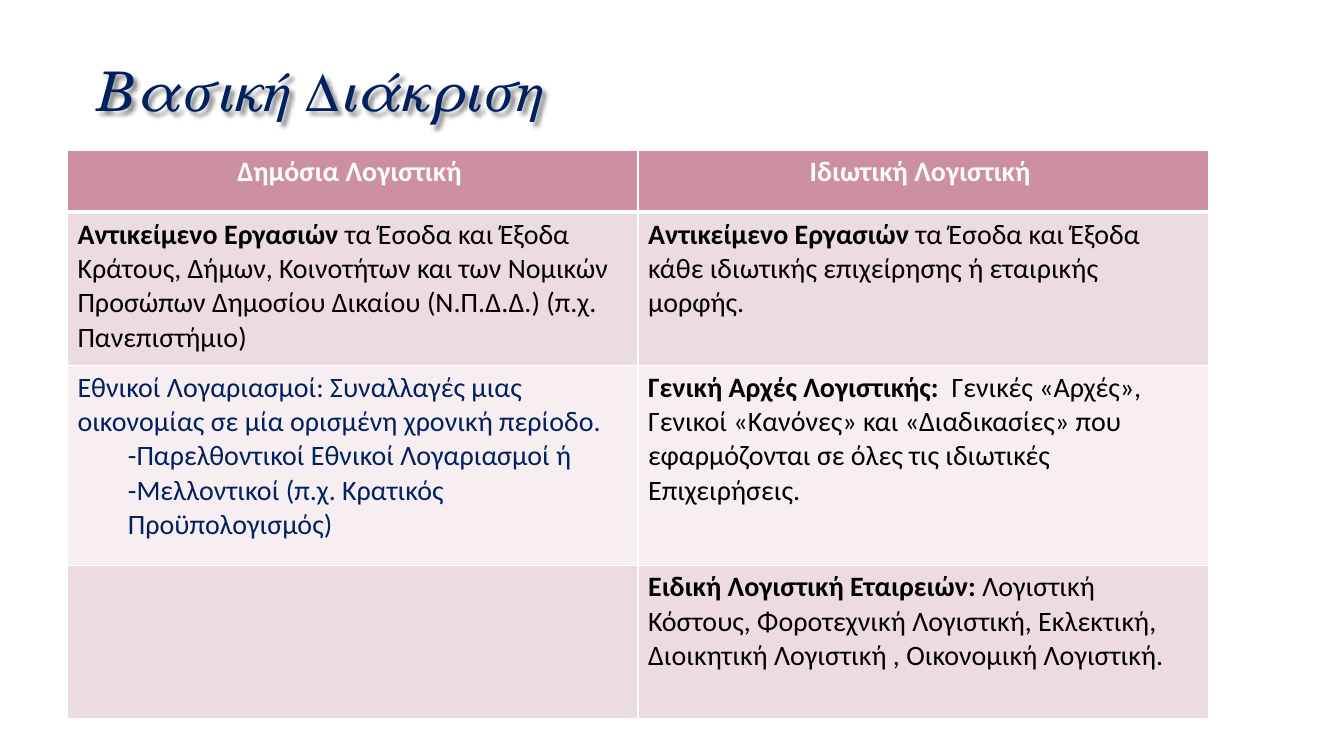
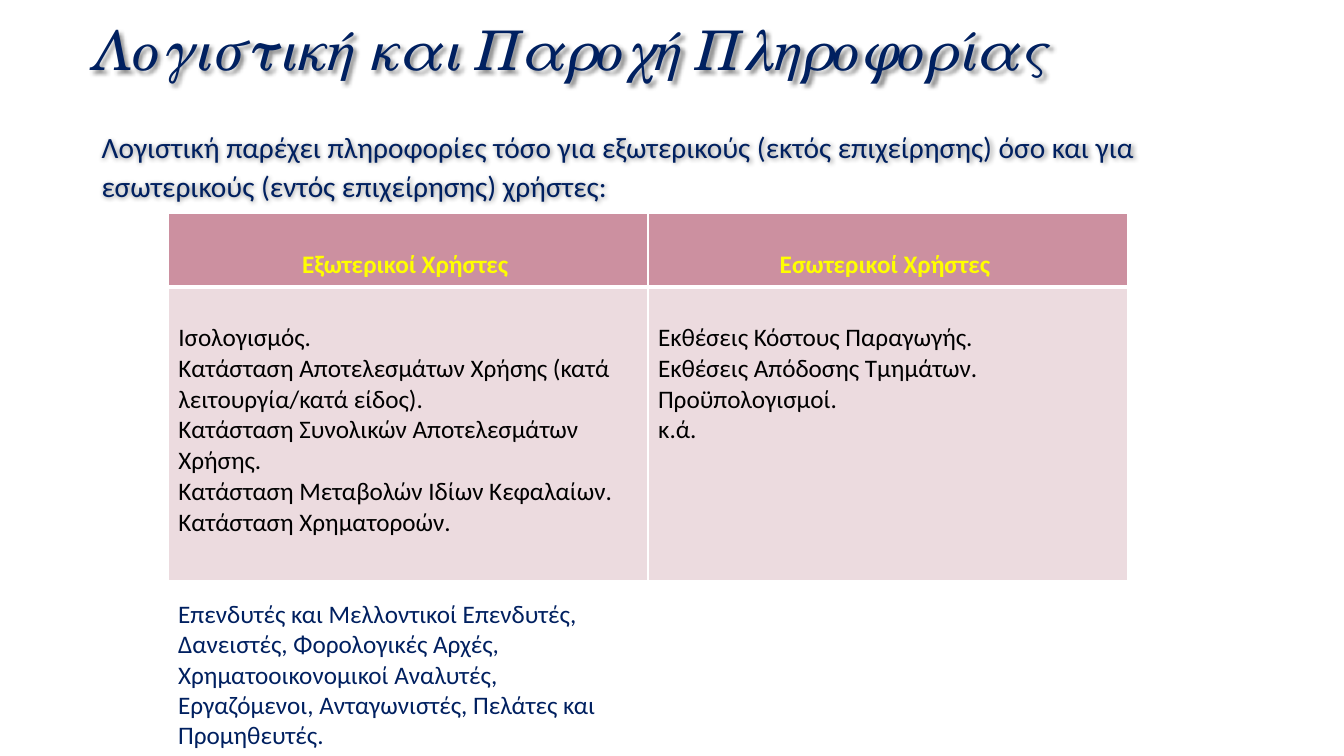
from lxml.etree import SubElement
from pptx import Presentation
from pptx.dml.color import RGBColor
from pptx.enum.text import MSO_ANCHOR, MSO_AUTO_SIZE, PP_ALIGN
from pptx.oxml import parse_xml
from pptx.oxml.ns import nsdecls, qn
from pptx.util import Cm, Pt

COLORS = {
    "navy": "002060", "black": "000000", "white": "FFFFFF", "yellow": "FFFF00",
    "outline": "404040", "header": "CC90A0", "band_dark": "ECDBDF",
    "band_light": "F6EEF0",
}
TITLE_FONT, TEXT_FONT = "TeX Gyre Schola", "Carlito"
CONTENT_LAYOUT, TITLE_LAYOUT = 1, 5
MARGIN_TOP = 0.13


def rgb(name):
    return RGBColor.from_string(COLORS[name])


class Deck:
    def __init__(self):
        self.prs = Presentation()
        self.prs.slide_width, self.prs.slide_height = Cm(33.87), Cm(19.05)
        self.s = None

    def slide(self, layout):
        self.s = self.prs.slides.add_slide(self.prs.slide_layouts[layout])

    def run(self, p, text, size, color, bold=False, italic=False, font=TEXT_FONT):
        r = p.add_run()
        r.text = text
        r.font.name, r.font.size = font, Pt(size)
        r.font.bold, r.font.italic = bold, italic
        r.font.color.rgb = rgb(color)
        return r

    def outline(self, r):
        """Give a run a thin, nearly transparent outline."""
        r.font._element.insert(0, parse_xml(
            f'<a:ln {nsdecls("a")} w="9525"><a:solidFill>'
            f'<a:srgbClr val="{COLORS["outline"]}"><a:alpha val="10000"/></a:srgbClr>'
            '</a:solidFill></a:ln>'))

    def placeholder(self, sp, box, distance):
        """Move a placeholder, shade its text and return its first paragraph."""
        sp.left, sp.top, sp.width, sp.height = map(Cm, box)
        sp._element.spPr.append(parse_xml(
            f'<a:effectLst {nsdecls("a")}><a:outerShdw blurRad="38100" '
            f'dist="{Pt(distance)}" dir="2700000" algn="tl" rotWithShape="0">'
            '<a:srgbClr val="000000"><a:alpha val="45000"/></a:srgbClr>'
            '</a:outerShdw></a:effectLst>'))
        sp.text_frame.auto_size = MSO_AUTO_SIZE.NONE
        return sp.text_frame.paragraphs[0]

    def title(self, text, left, top, align=PP_ALIGN.LEFT):
        sp = self.s.shapes.title
        p = self.placeholder(sp, (left, top, 28.75, 3.5), 3)
        sp.text_frame.vertical_anchor = MSO_ANCHOR.MIDDLE
        p.alignment, p.line_spacing = align, 0.9
        self.outline(self.run(p, text, 39, "navy", italic=True, font=TITLE_FONT))

    def body(self, text, box):
        p = self.placeholder(self.s.placeholders[1], box, 1)
        p.line_spacing, p.space_before, p.space_after = 1.1, Pt(4.2), Pt(6)
        pPr = p._p.get_or_add_pPr()
        pPr.set("marL", str(Cm(0.1)))
        pPr.set("indent", "0")
        SubElement(pPr, qn("a:buNone"))
        self.outline(self.run(p, text, 21, "navy"))

    def textbox(self, text, box, size, margin_top):
        tf = self.s.shapes.add_textbox(*map(Cm, box)).text_frame
        tf.word_wrap, tf.margin_top = True, Cm(margin_top)
        self.run(tf.paragraphs[0], text, size, "navy")

    def borders(self, cell, is_header):
        tcPr = cell._tc.get_or_add_tcPr()
        sides = "LRTB" if is_header else "LRB"
        for side in sides:
            width = 3 if is_header and side == "B" else 1
            tcPr.append(parse_xml(
                f'<a:ln{side} {nsdecls("a")} w="{Pt(width)}"><a:solidFill>'
                f'<a:srgbClr val="{COLORS["white"]}"/></a:solidFill></a:ln{side}>'))

    def cell(self, cell, paragraphs, size, color, fill, is_header, margin_top):
        """Fill a cell; a paragraph is a list of (text, bold) runs."""
        self.borders(cell, is_header)
        cell.fill.solid()
        cell.fill.fore_color.rgb = rgb(fill)
        cell.margin_top = Cm(margin_top)
        for i, runs in enumerate(paragraphs):
            tf = cell.text_frame
            p = tf.add_paragraph() if i else tf.paragraphs[0]
            if is_header:
                p.alignment = PP_ALIGN.CENTER
            for text, bold in runs:
                if text.startswith("-"):
                    p._p.get_or_add_pPr().set("marL", str(Cm(1.27)))
                self.run(p, text, size, color, bold)

    def table(self, headers, rows, left, top, col_width, heights, size,
              header_color, margin_top=MARGIN_TOP):
        """Draw a banded table; a body cell is (colour, paragraphs)."""
        header_row = [(header_color, [[(h, True)]]) for h in headers]
        grid = [header_row] + rows
        tbl = self.s.shapes.add_table(
            len(grid), len(headers), Cm(left), Cm(top),
            Cm(col_width * len(headers)), Cm(sum(heights))).table
        for col in tbl.columns:
            col.width = Cm(col_width)
        for i, cells in enumerate(grid):
            tbl.rows[i].height = Cm(heights[i])
            fill = ("band_dark" if i % 2 else "band_light") if i else "header"
            for j, (color, paragraphs) in enumerate(cells):
                self.cell(tbl.cell(i, j), paragraphs, size, color, fill,
                          i == 0, margin_top)


def plain(color, *lines):
    return color, [[(line, False)] for line in lines]


def labelled(label, text):
    return "black", [[(label, True), (text, False)]]


def distinction_slide(deck):
    deck.slide(TITLE_LAYOUT)
    deck.title("Βασική Διάκριση", 2.21, 0.61)
    rows = [
        [labelled("Αντικείμενο Εργασιών ",
                  "τα Έσοδα και Έξοδα Κράτους, Δήμων, Κοινοτήτων και των Νομικών "
                  "Προσώπων Δημοσίου Δικαίου (Ν.Π.Δ.Δ.) (π.χ. Πανεπιστήμιο)"),
         labelled("Αντικείμενο Εργασιών ",
                  "τα Έσοδα και Έξοδα κάθε ιδιωτικής επιχείρησης ή εταιρικής "
                  "μορφής.")],
        [plain("navy",
               "Εθνικοί Λογαριασμοί: Συναλλαγές μιας οικονομίας σε μία ορισμένη "
               "χρονική περίοδο.",
               "-Παρελθοντικοί Εθνικοί Λογαριασμοί ή",
               "-Μελλοντικοί (π.χ. Κρατικός Προϋπολογισμός)"),
         labelled("Γενική Αρχές Λογιστικής:  ",
                  "Γενικές «Αρχές», Γενικοί «Κανόνες» και «Διαδικασίες» που "
                  "εφαρμόζονται σε όλες τις ιδιωτικές Επιχειρήσεις.")],
        [plain("black"),
         labelled("Ειδική Λογιστική Εταιρειών: ",
                  "Λογιστική Κόστους, Φοροτεχνική Λογιστική, Εκλεκτική, "
                  "Διοικητική Λογιστική , Οικονομική Λογιστική.")],
    ]
    deck.table(["Δημόσια Λογιστική ", "Ιδιωτική Λογιστική "], rows, 1.7, 3.78,
               14.38, [1.57, 3.86, 5.03, 3.86], 20, "white")


def users_slide(deck):
    deck.slide(CONTENT_LAYOUT)
    deck.title("Λογιστική και Παροχή Πληροφορίας", 0, -0.43, PP_ALIGN.CENTER)
    deck.body("Λογιστική παρέχει πληροφορίες τόσο για εξωτερικούς (εκτός "
              "επιχείρησης) όσο και για εσωτερικούς (εντός επιχείρησης) χρήστες:",
              (2.21, 3.05, 28.75, 10.31))
    reports = [
        plain("black", "Ισολογισμός.",
              "Κατάσταση Αποτελεσμάτων Χρήσης (κατά λειτουργία/κατά είδος).",
              "Κατάσταση Συνολικών Αποτελεσμάτων Χρήσης.",
              "Κατάσταση Μεταβολών Ιδίων Κεφαλαίων.",
              "Κατάσταση Χρηματοροών."),
        plain("black", "Εκθέσεις Κόστους Παραγωγής.", "Εκθέσεις Απόδοσης Τμημάτων.",
              "Προϋπολογισμοί.", "κ.ά."),
    ]
    deck.table(["Εξωτερικοί Χρήστες ", "Εσωτερικοί Χρήστες "], [reports], 4.24, 5.38,
               12.09, [1.85, 7.39], 18, "yellow", margin_top=0.9)
    deck.textbox("Επενδυτές και Μελλοντικοί Επενδυτές, Δανειστές, Φορολογικές Αρχές, "
                 "Χρηματοοικονομικοί Αναλυτές, Εργαζόμενοι, Ανταγωνιστές, Πελάτες "
                 "και Προμηθευτές.", (4.24, 14.35, 11.96, 4.7), 18, 0.73)


def main():
    deck = Deck()
    distinction_slide(deck)
    users_slide(deck)
    deck.prs.save("out.pptx")


if __name__ == "__main__":
    main()
